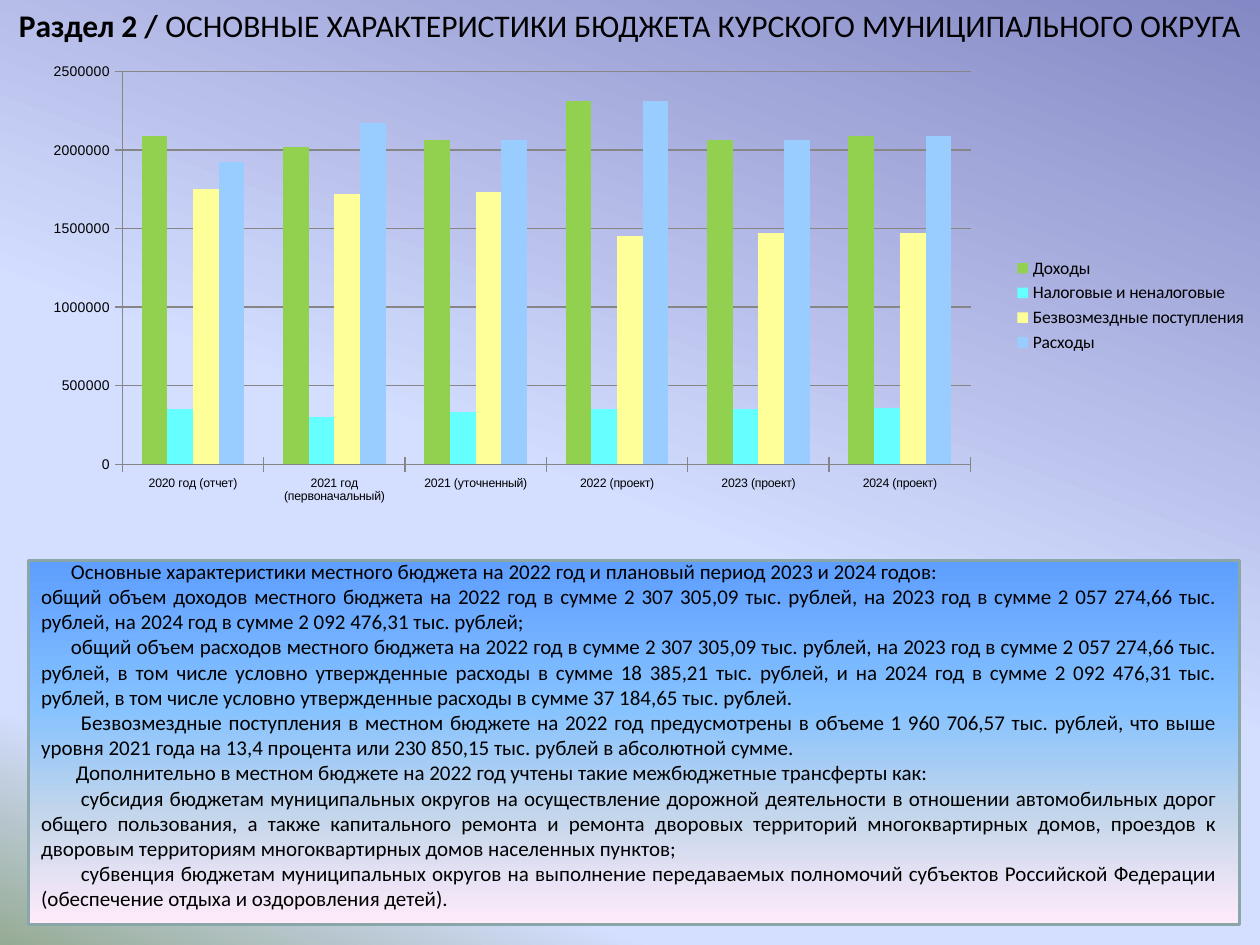
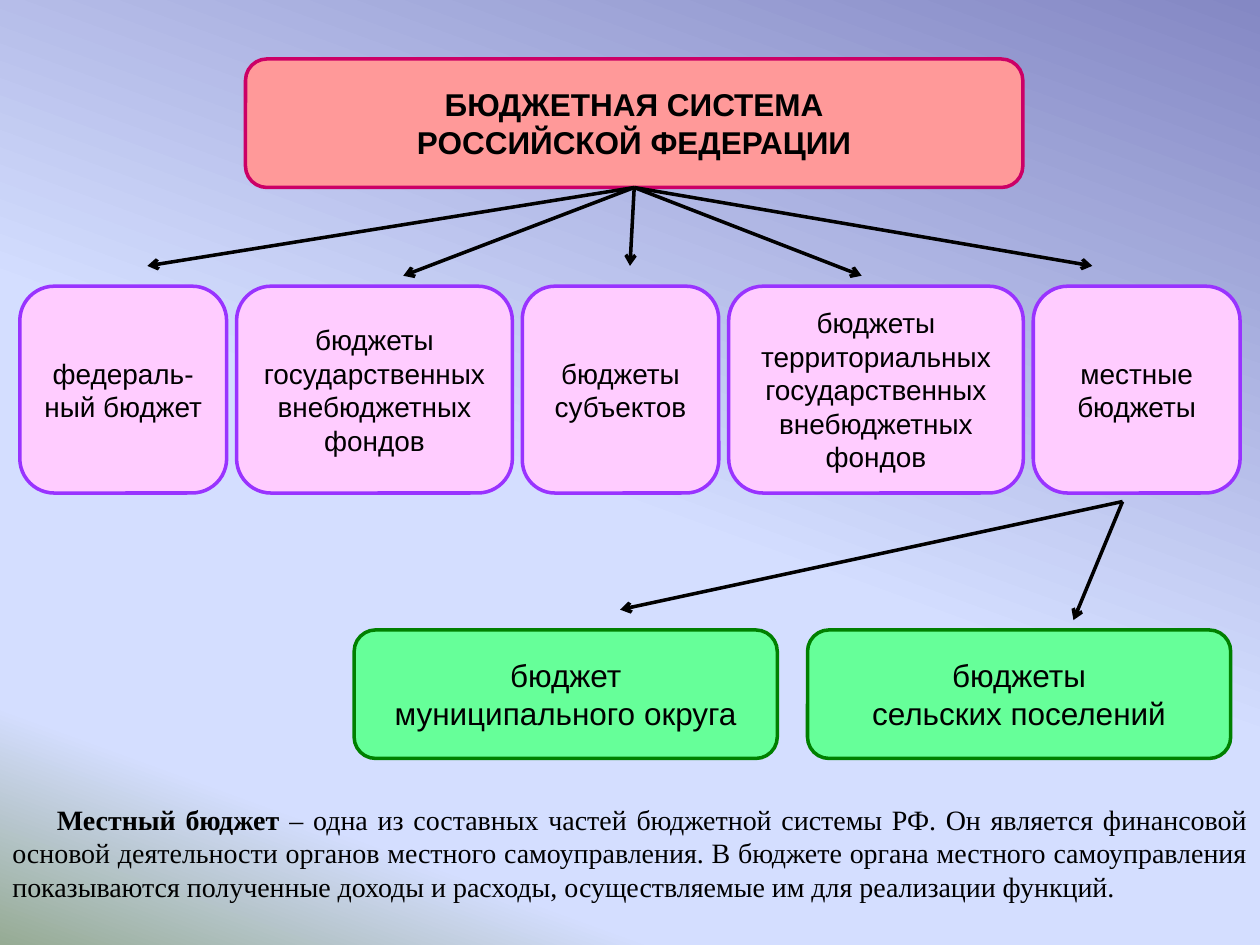
import pptx
import pptx.chart.data
import pptx.enum.chart
import pptx.enum.shapes
import pptx.enum.text
import pptx.oxml
import pptx.oxml.ns
from pptx.dml.color import RGBColor
from pptx.util import Cm, Pt

COLORS = {
    "text": "000000", "grid": "868686", "panel_line": "8AA6A8",
    "root": "FF9999", "root_line": "CC0066",
    "level": "FFCCFF", "level_line": "9933FF",
    "local": "66FF99", "local_line": "008000",
    "income": "92D050", "taxes": "66FFFF", "grants": "FFFF99", "spending": "99CCFF",
}
BACKGROUND = [(0, "8488C4"), (53, "D4DEFF"), (83, "D4DEFF"), (100, "96AB94")]
PANEL = [(0, "5E9EFF"), (40, "85C2FF"), (70, "C4D6EB"), (100, "FFEBFA")]

TITLE = [("Раздел 2 / ", True),
         ("ОСНОВНЫЕ ХАРАКТЕРИСТИКИ БЮДЖЕТА КУРСКОГО МУНИЦИПАЛЬНОГО ОКРУГА", False)]
YEARS = ["2020 год (отчет)", "2021 год (первоначальный)", "2021 (уточненный)",
         "2022 (проект)", "2023 (проект)", "2024 (проект)"]
SERIES = [
    ("Доходы", "income", [2090000, 2020000, 2060000, 2310000, 2060000, 2090000]),
    ("Налоговые и неналоговые", "taxes", [350000, 300000, 330000, 350000, 350000, 360000]),
    ("Безвозмездные поступления", "grants",
     [1750000, 1720000, 1730000, 1450000, 1470000, 1470000]),
    ("Расходы", "spending", [1920000, 2170000, 2060000, 2310000, 2060000, 2090000]),
]
PLOT_AREA = {"x": 0.076, "y": 0.025, "w": 0.689, "h": 0.798}

# (first-line indent in cm, text)
SUMMARY = [
    (0.6, "Основные характеристики местного бюджета на 2022 год и плановый период 2023 и 2024 годов:"),
    (0, "общий объем доходов местного бюджета на 2022 год в сумме 2 307 305,09 тыс. рублей, "
        "на 2023 год в сумме 2 057 274,66 тыс. рублей, на 2024 год в сумме 2 092 476,31 тыс. рублей;"),
    (0.6, "общий объем расходов местного бюджета на 2022 год в сумме 2 307 305,09 тыс. рублей, "
          "на 2023 год в сумме 2 057 274,66 тыс. рублей, в том числе условно утвержденные расходы "
          "в сумме 18 385,21 тыс. рублей, и на 2024 год в сумме 2 092 476,31 тыс. рублей, "
          "в том числе условно утвержденные расходы в сумме 37 184,65 тыс. рублей."),
    (0.8, "Безвозмездные поступления в местном бюджете на 2022 год предусмотрены в объеме "
          "1 960 706,57 тыс. рублей, что выше уровня 2021 года на 13,4 процента или "
          "230 850,15 тыс. рублей в абсолютной сумме."),
    (0.7, "Дополнительно в местном бюджете на 2022 год учтены такие межбюджетные трансферты как:"),
    (0.8, "субсидия бюджетам муниципальных округов на осуществление дорожной деятельности "
          "в отношении автомобильных дорог общего пользования, а также капитального ремонта "
          "и ремонта дворовых территорий многоквартирных домов, проездов к дворовым территориям "
          "многоквартирных домов населенных пунктов;"),
    (0.8, "субвенция бюджетам муниципальных округов на выполнение передаваемых полномочий "
          "субъектов Российской Федерации (обеспечение отдыха и оздоровления детей)."),
]

ROOT = ["БЮДЖЕТНАЯ СИСТЕМА", "РОССИЙСКОЙ ФЕДЕРАЦИИ"]
# (width in cm, lines)
LEVELS = [
    (4.17, ["федераль-", "ный бюджет"]),
    (5.56, ["бюджеты государственных внебюджетных фондов"]),
    (3.96, ["бюджеты субъектов"]),
    (5.94, ["бюджеты территориальных государственных внебюджетных фондов"]),
    (4.17, ["местные бюджеты"]),
]
LOCALS = [(8.53, ["бюджет", "муниципального округа"]),
          (8.53, ["бюджеты", "сельских поселений"])]
LEVEL_ARROW_TIPS = [(2.97, 5.36), (8.13, 5.56), (12.7, 5.36), (17.37, 5.56), (22.02, 5.36)]
LOCAL_ARROW_START = (22.63, 10.11)
LOCAL_ARROW_TIPS = [(12.5, 12.29), (21.64, 12.5)]
DEFINITION = [
    ("Местный бюджет ", True),
    ("– одна из составных частей бюджетной системы РФ. Он является финансовой основой "
     "деятельности органов местного самоуправления. В бюджете органа местного самоуправления "
     "показываются полученные доходы и расходы, осуществляемые им для реализации функций.", False),
]

ALIGN = pptx.enum.text.PP_ALIGN
SHAPE = pptx.enum.shapes.MSO_SHAPE


def rgb(name):
    return RGBColor.from_string(COLORS[name])


def sub(parent, tag, **attrs):
    """Append a child element such as a:gs with its attributes."""
    el = pptx.oxml.parse_xml(f"<{tag} {pptx.oxml.ns.nsdecls(tag.split(':')[0])}/>")
    for key, value in attrs.items():
        el.set(key, str(value))
    parent.append(el)
    return el


def set_gradient(fill, element, stops, angle):
    fill.gradient()
    grad = element.xpath(".//a:gradFill")[0]
    gs_list = grad.find(pptx.oxml.ns.qn("a:gsLst"))
    for gs in list(gs_list):
        gs_list.remove(gs)
    for percent, color in stops:
        sub(sub(gs_list, "a:gs", pos=percent * 1000), "a:srgbClr", val=color)
    grad.find(pptx.oxml.ns.qn("a:lin")).set("ang", str(angle * 60000))


def add_slide(prs):
    s = prs.slides.add_slide(prs.slide_layouts[6])
    set_gradient(s.background.fill, s.element, BACKGROUND, 110)
    return s


def write(tf, paragraphs, font, size, align):
    """Fill a frame from (indent in cm, [(text, bold), ...]) paragraphs."""
    tf.word_wrap = True
    for i, (indent, runs) in enumerate(paragraphs):
        p = tf.paragraphs[0] if i == 0 else tf.add_paragraph()
        p.alignment = align
        if indent:
            p._p.get_or_add_pPr().set("indent", str(Cm(indent)))
        for text, bold in runs:
            r = p.add_run()
            r.text = text
            r.font.name, r.font.size, r.font.bold = font, Pt(size), bold
            r.font.color.rgb = rgb("text")


def add_text(s, box, paragraphs, font, size, align):
    tf = s.shapes.add_textbox(*map(Cm, box)).text_frame
    write(tf, paragraphs, font, size, align)
    tf.auto_size = pptx.enum.text.MSO_AUTO_SIZE.SHAPE_TO_FIT_TEXT


def add_box(s, kind, box, line):
    sp = s.shapes.add_shape(kind, *map(Cm, box))
    sp.shadow.inherit = False
    sp.line.color.rgb = rgb(line)
    sp.line.width = Pt(2)
    return sp


def add_node(s, box, role, lines, size, bold=False):
    sp = add_box(s, SHAPE.ROUNDED_RECTANGLE, box, role + "_line")
    sp.fill.solid()
    sp.fill.fore_color.rgb = rgb(role)
    sp.text_frame.vertical_anchor = pptx.enum.text.MSO_ANCHOR.MIDDLE
    write(sp.text_frame, [(0, [(line, bold)]) for line in lines], "Arial", size, ALIGN.CENTER)
    return sp


def add_row(s, left, top, height, gap, nodes, role, size):
    for width, lines in nodes:
        add_node(s, (left, top, width, height), role, lines, size)
        left += width + gap


def add_arrow(s, start, tip):
    cx = s.shapes.add_connector(pptx.enum.shapes.MSO_CONNECTOR.STRAIGHT,
                                *map(Cm, (*start, *tip)))
    cx.line.color.rgb = rgb("text")
    cx.line.width = Pt(2)
    spPr = cx.element.spPr
    sub(spPr.find(pptx.oxml.ns.qn("a:ln")), "a:tailEnd", type="arrow")
    sub(spPr, "a:effectLst")
    return cx


def set_font(font, size, name="Arial"):
    font.size, font.name = Pt(size), name
    font.color.rgb = rgb("text")


def add_budget_chart(s, box):
    data = pptx.chart.data.CategoryChartData()
    data.categories = YEARS
    for name, _, values in SERIES:
        data.add_series(name, values)
    chart = s.shapes.add_chart(pptx.enum.chart.XL_CHART_TYPE.COLUMN_CLUSTERED,
                               *map(Cm, box), data).chart
    chart.has_title = False
    set_font(chart.font, 18)
    chart.has_legend = True
    chart.legend.position = pptx.enum.chart.XL_LEGEND_POSITION.RIGHT
    chart.legend.include_in_layout = False
    set_font(chart.legend.font, 10, "Calibri")

    plot = chart.plots[0]
    plot.gap_width, plot.overlap, plot.vary_by_categories = 150, 0, False
    for series, (_, color, _) in zip(plot.series, SERIES):
        series.format.fill.solid()
        series.format.fill.fore_color.rgb = rgb(color)

    for axis, size in ((chart.category_axis, 7), (chart.value_axis, 8)):
        axis.major_tick_mark = pptx.enum.chart.XL_TICK_MARK.CROSS
        axis.format.line.color.rgb = rgb("grid")
        set_font(axis.tick_labels.font, size)
    axis = chart.value_axis
    axis.minimum_scale, axis.maximum_scale, axis.major_unit = 0, 2500000, 500000
    axis.major_gridlines.format.line.color.rgb = rgb("grid")

    area = chart.element.xpath(".//c:plotArea")[0]
    for old in area.xpath("./c:layout"):
        area.remove(old)
    layout = sub(area, "c:layout")
    area.insert(0, layout)
    manual = sub(layout, "c:manualLayout")
    sub(manual, "c:layoutTarget", val="inner")
    for side in "xy":
        sub(manual, f"c:{side}Mode", val="edge")
    for key, value in PLOT_AREA.items():
        sub(manual, f"c:{key}", val=value)


def build_summary(prs):
    s = add_slide(prs)
    panel = add_box(s, SHAPE.RECTANGLE, (0.58, 11.3, 24.41, 7.34), "panel_line")
    set_gradient(panel.fill, panel.element, PANEL, 90)
    add_text(s, (0, 0, 25.4, 1.8), [(0, TITLE)], "Calibri", 18, ALIGN.CENTER)
    add_budget_chart(s, (0.58, 1.19, 24.82, 9.93))
    add_text(s, (0.58, 11.13, 24.21, 7.44),
             [(indent, [(text, False)]) for indent, text in SUMMARY],
             "Calibri", 12, ALIGN.JUSTIFY)


def build_system(prs):
    s = add_slide(prs)
    root = add_node(s, (4.95, 1.19, 15.67, 2.59), "root", ROOT, 18, True)
    add_row(s, 0.4, 5.77, 4.17, 0.2, LEVELS, "level", 16)
    for tip in LEVEL_ARROW_TIPS:
        add_arrow(s, (12.8, 3.78), tip).begin_connect(root, 2)
    add_row(s, 7.14, 12.7, 2.59, 0.61, LOCALS, "local", 18)
    for tip in LOCAL_ARROW_TIPS:
        add_arrow(s, LOCAL_ARROW_START, tip)
    add_text(s, (0, 16.05, 25.4, 3), [(0.9, DEFINITION)], "Times New Roman", 16, ALIGN.JUSTIFY)


def main():
    prs = pptx.Presentation()
    prs.slide_width, prs.slide_height = Cm(25.4), Cm(19.05)
    build_summary(prs)
    build_system(prs)
    prs.save("out.pptx")


if __name__ == "__main__":
    main()
